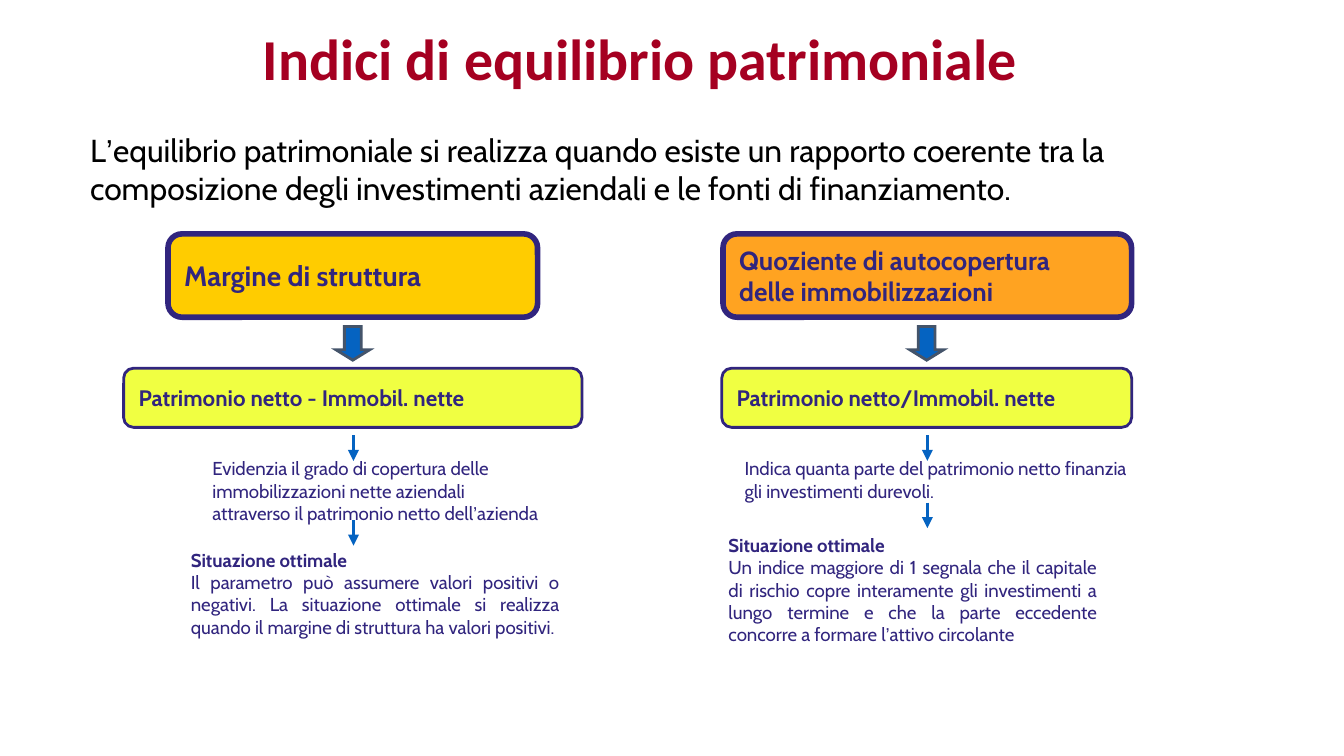
"""Build the slide on balance sheet equilibrium ratios."""
import pptx
import pptx.dml.color
import pptx.enum.shapes
import pptx.enum.text
import pptx.oxml.ns
import pptx.util
from lxml import etree

Inches = pptx.util.Inches
Pt = pptx.util.Pt
qn = pptx.oxml.ns.qn
SHAPES = pptx.enum.shapes.MSO_SHAPE
ALIGN = pptx.enum.text.PP_ALIGN
ANCHOR = pptx.enum.text.MSO_ANCHOR
COLORS = {
    "title": "A50021", "black": "000000", "white": "FFFFFF", "navy": "31257E",
    "gold": "FFCC00", "orange": "FFA321", "lime": "F0FF42",
    "blue": "0563C1", "slate": "44546A",
}
COLUMNS = [
    {
        "center": 2.63,
        "name": (1.25, 2.75, "gold", 15, ["Margine di struttura"]),
        "formula": (0.92, 3.41, "Patrimonio netto - Immobil. nette"),
        "meaning": (1.49, 2.77, 0.59, [
            "Evidenzia il grado di copertura delle",
            "immobilizzazioni nette aziendali",
            "attraverso il patrimonio netto dell’azienda",
        ]),
        "optimum": (1.33, 4.04, 0.93, "Il parametro può assumere valori positivi o negativi. "
                    "La situazione ottimale si realizza quando il margine di struttura "
                    "ha valori positivi."),
        "arrows": (3.24, 3.87),
    },
    {
        "center": 6.9,
        "name": (5.38, 3.04, "orange", 14,
                 ["Quoziente di autocopertura", "delle immobilizzazioni"]),
        "formula": (5.37, 3.05, "Patrimonio netto/Immobil. nette"),
        "meaning": (5.45, 3.2, 0.42, [
            "Indica quanta parte del patrimonio netto finanzia",
            "gli investimenti durevoli.",
        ]),
        "optimum": (5.33, 3.93, 1.1, "Un indice maggiore di 1 segnala che il capitale di rischio "
                    "copre interamente gli investimenti a lungo termine e che la parte "
                    "eccedente concorre a formare l’attivo circolante"),
        "arrows": (3.24, 3.74),
    },
]


def rgb(name):
    """Return the named colour."""
    return pptx.dml.color.RGBColor.from_string(COLORS[name])


def write_lines(box, lines, size, color="navy", bold_lines=0, align=ALIGN.JUSTIFY,
                font="Cabin", wrap=True):
    """Write one paragraph per line, with curly apostrophes in Arial."""
    frame = box.text_frame
    frame.word_wrap = wrap
    frame.margin_left = frame.margin_right = Inches(0.09)
    frame.margin_top = frame.margin_bottom = Inches(0.04)
    for index, line in enumerate(lines):
        para = frame.add_paragraph() if index else frame.paragraphs[0]
        para.alignment = align
        for part in line.replace("’", "|’|").split("|"):
            span = para.add_run()
            span.text = part
            span.font.name = "Arial" if part == "’" else font
            span.font.size = Pt(size)
            span.font.bold = index < bold_lines
            span.font.color.rgb = rgb(color)


def add_text(page, left, top, width, height, lines, size, **style):
    """Add a text box that grows with its lines."""
    box = page.shapes.add_textbox(Inches(left), Inches(top), Inches(width), Inches(height))
    write_lines(box, lines, size, **style)
    box.text_frame.auto_size = pptx.enum.text.MSO_AUTO_SIZE.SHAPE_TO_FIT_TEXT


def add_shape(page, kind, left, top, width, height, fill, line, weight, adjustments):
    """Add a filled and outlined preset shape."""
    shape = page.shapes.add_shape(kind, Inches(left), Inches(top), Inches(width), Inches(height))
    shape.shadow.inherit = False
    shape.fill.solid()
    shape.fill.fore_color.rgb = rgb(fill)
    shape.line.color.rgb = rgb(line)
    shape.line.width = Pt(weight)
    for index, value in enumerate(adjustments):
        shape.adjustments[index] = value
    return shape


def add_label(page, left, top, width, height, fill, weight, lines, size):
    """Add a rounded box with bold text."""
    box = add_shape(page, SHAPES.ROUNDED_RECTANGLE, left, top, width, height,
                    fill, "navy", weight, [0.167])
    box.text_frame.vertical_anchor = ANCHOR.MIDDLE
    write_lines(box, lines, size, bold_lines=len(lines), align=ALIGN.LEFT, wrap=False)


def add_block_arrow(page, center):
    """Add a block arrow with sharp corners pointing down."""
    arrow = add_shape(page, SHAPES.DOWN_ARROW, center - 0.13, 2.43, 0.25, 0.25,
                      "blue", "slate", 1.5, [0.5, 0.308])
    etree.SubElement(arrow.line._get_or_add_ln(), qn("a:miter"), lim="800000")


def add_arrow(page, center, top):
    """Add a short thin arrow pointing down."""
    arrow = page.shapes.add_connector(
        pptx.enum.shapes.MSO_CONNECTOR.STRAIGHT,
        Inches(center), Inches(top), Inches(center), Inches(top + 0.19))
    arrow.line.color.rgb = rgb("blue")
    arrow.line.width = Pt(1.5)
    etree.SubElement(arrow.line._get_or_add_ln(), qn("a:tailEnd"), type="triangle")
    etree.SubElement(arrow._element.spPr, qn("a:effectLst"))


def add_title(page, text):
    """Add the centred slide title on a translucent fill."""
    box = page.shapes.add_textbox(Inches(0.38), Inches(0.15), Inches(8.76), Inches(0.62))
    box.fill.solid()
    box.fill.fore_color.rgb = rgb("white")
    color = box._element.spPr.find(".//" + qn("a:srgbClr"))
    etree.SubElement(color, qn("a:alpha"), val="20000")
    box.text_frame.vertical_anchor = ANCHOR.MIDDLE
    write_lines(box, [text], 31, color="title", bold_lines=1, align=ALIGN.CENTER, font="Calibri")
    box.text_frame.paragraphs[0].line_spacing = 0.9


def add_column(page, column):
    """Add one ratio: name, formula, meaning and optimum."""
    center = column["center"]
    left, width, fill, size, lines = column["name"]
    add_label(page, left, 1.74, width, 0.62, fill, 3, lines, size)
    add_block_arrow(page, center)
    left, width, formula = column["formula"]
    add_label(page, left, 2.74, width, 0.44, "lime", 1.5, [formula], 12)
    left, width, height, lines = column["meaning"]
    add_text(page, left, 3.36, width, height, lines, 10, wrap=False)
    left, top, height, text = column["optimum"]
    add_text(page, left, top, 2.92, height, ["Situazione ottimale", text], 10, bold_lines=1)
    for top in column["arrows"]:
        add_arrow(page, center, top)


def main():
    """Build and save the deck."""
    deck = pptx.Presentation()
    deck.slide_width = Inches(10)
    deck.slide_height = Inches(10 * 9 / 16)
    page = deck.slides.add_slide(deck.slide_layouts[6])
    add_title(page, "Indici di equilibrio patrimoniale")
    add_text(page, 0.58, 0.93, 8.92, 0.66, [
        "L’equilibrio patrimoniale si realizza quando esiste un rapporto coerente tra la",
        "composizione degli investimenti aziendali e le fonti di finanziamento.",
    ], 17, color="black")
    for column in COLUMNS:
        add_column(page, column)
    deck.save("out.pptx")


if __name__ == "__main__":
    main()
